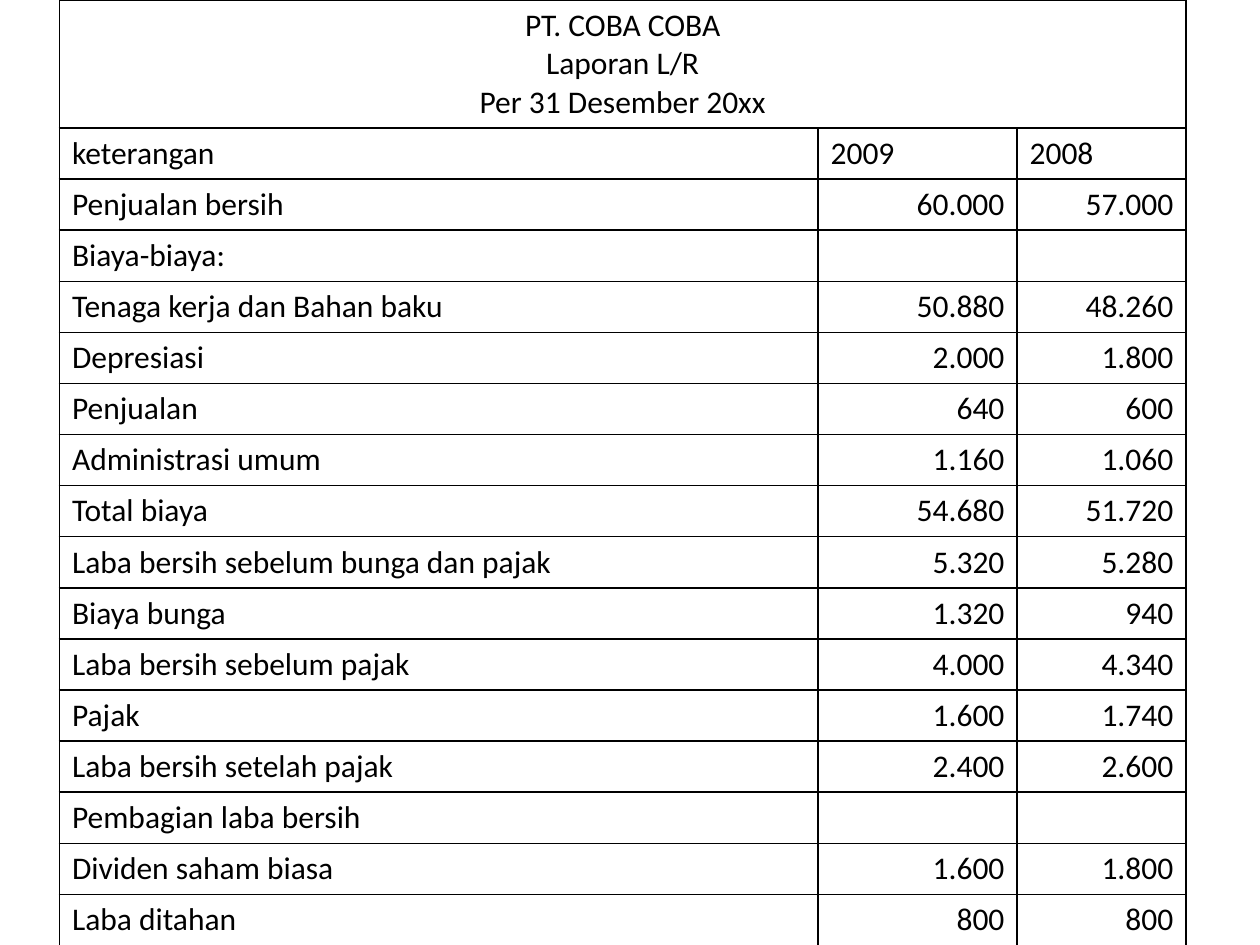
from lxml.etree import SubElement
from pptx import Presentation
from pptx.dml.color import RGBColor
from pptx.enum.text import PP_ALIGN
from pptx.oxml.ns import qn
from pptx.util import Pt

TITLE = "PT. COBA COBA\nLaporan L/R\nPer 31 Desember 20xx"
HEADINGS = ("keterangan", "2009", "2008")
ENTRIES = [
    ("Penjualan bersih", "60.000", "57.000"),
    ("Biaya-biaya:", "", ""),
    ("Tenaga kerja dan Bahan baku", "50.880", "48.260"),
    ("Depresiasi", "2.000", "1.800"),
    ("Penjualan", "640", "600"),
    ("Administrasi umum", "1.160", "1.060"),
    ("Total biaya", "54.680", "51.720"),
    ("Laba bersih sebelum bunga dan pajak", "5.320", "5.280"),
    ("Biaya bunga", "1.320", "940"),
    ("Laba bersih sebelum pajak", "4.000", "4.340"),
    ("Pajak", "1.600", "1.740"),
    ("Laba bersih setelah pajak", "2.400", "2.600"),
    ("Pembagian laba bersih", "", ""),
    ("Dividen saham biasa", "1.600", "1.800"),
    ("Laba ditahan", "800", "800"),
]
COLUMN_WIDTHS = (433.5, 113.75, 96.5)
TITLE_HEIGHT = 73
ROW_HEIGHT = 29.16


def colour(hex_string):
    return RGBColor.from_string(hex_string)


class StatementSlide:
    font = "Calibri"
    size = 18
    ink = "000000"
    line_width = 1

    def __init__(self, deck):
        self.slide = deck.slides.add_slide(deck.slide_layouts[6])

    def border(self, cell):
        properties = cell._tc.get_or_add_tcPr()
        for side in ("a:lnL", "a:lnR", "a:lnT", "a:lnB"):
            line = SubElement(properties, qn(side), w=str(Pt(self.line_width)))
            fill = SubElement(line, qn("a:solidFill"))
            SubElement(fill, qn("a:srgbClr"), val=str(colour(self.ink)))

    def cell_text(self, cell, text, alignment):
        cell.text_frame.text = text
        for para in cell.text_frame.paragraphs:
            para.alignment = alignment
            for span in para.runs:
                span.font.name = self.font
                span.font.size = Pt(self.size)
                span.font.bold = False
                span.font.color.rgb = colour(self.ink)

    def table(self, left, top, title, headings, entries):
        rows = [headings, *entries]
        height = TITLE_HEIGHT + ROW_HEIGHT * len(rows)
        frame = self.slide.shapes.add_table(
            len(rows) + 1, len(headings), Pt(left), Pt(top),
            Pt(sum(COLUMN_WIDTHS)), Pt(height))
        table = frame.table
        table.first_row = table.horz_banding = False

        # Grid
        for column, width in zip(table.columns, COLUMN_WIDTHS):
            column.width = Pt(width)
        for index, row in enumerate(table.rows):
            row.height = Pt(ROW_HEIGHT if index else TITLE_HEIGHT)
        for cell in table.iter_cells():
            self.border(cell)
            cell.fill.background()

        # Title across all columns
        table.cell(0, 0).merge(table.cell(0, len(headings) - 1))
        self.cell_text(table.cell(0, 0), title, PP_ALIGN.CENTER)

        # Headings and labels on the left, amounts on the right
        for r, row in enumerate(rows, start=1):
            for c, text in enumerate(row):
                is_amount = r > 1 and c > 0
                self.cell_text(table.cell(r, c), text,
                               PP_ALIGN.RIGHT if is_amount else PP_ALIGN.LEFT)


def main():
    deck = Presentation()
    deck.slide_width, deck.slide_height = Pt(720), Pt(540)
    page = StatementSlide(deck)
    page.table(34, 0, TITLE, HEADINGS, ENTRIES)
    deck.save("out.pptx")


if __name__ == "__main__":
    main()
